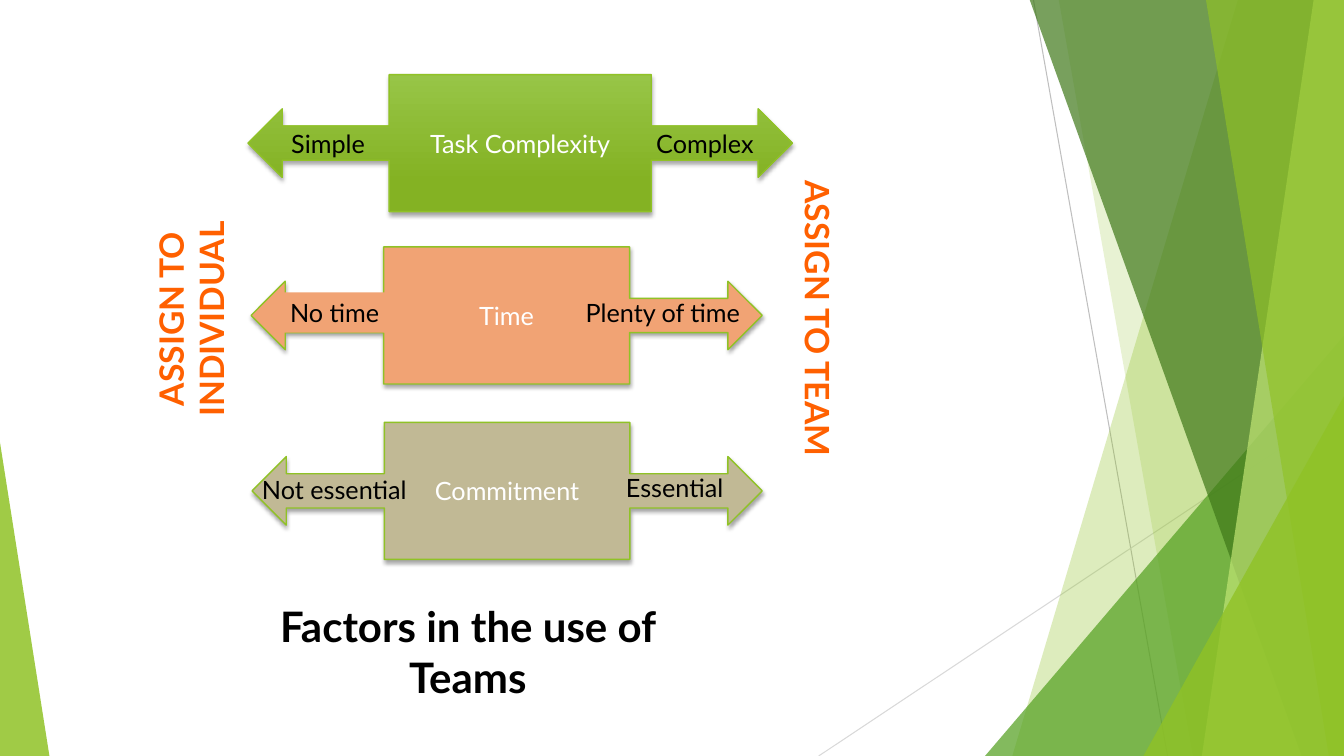
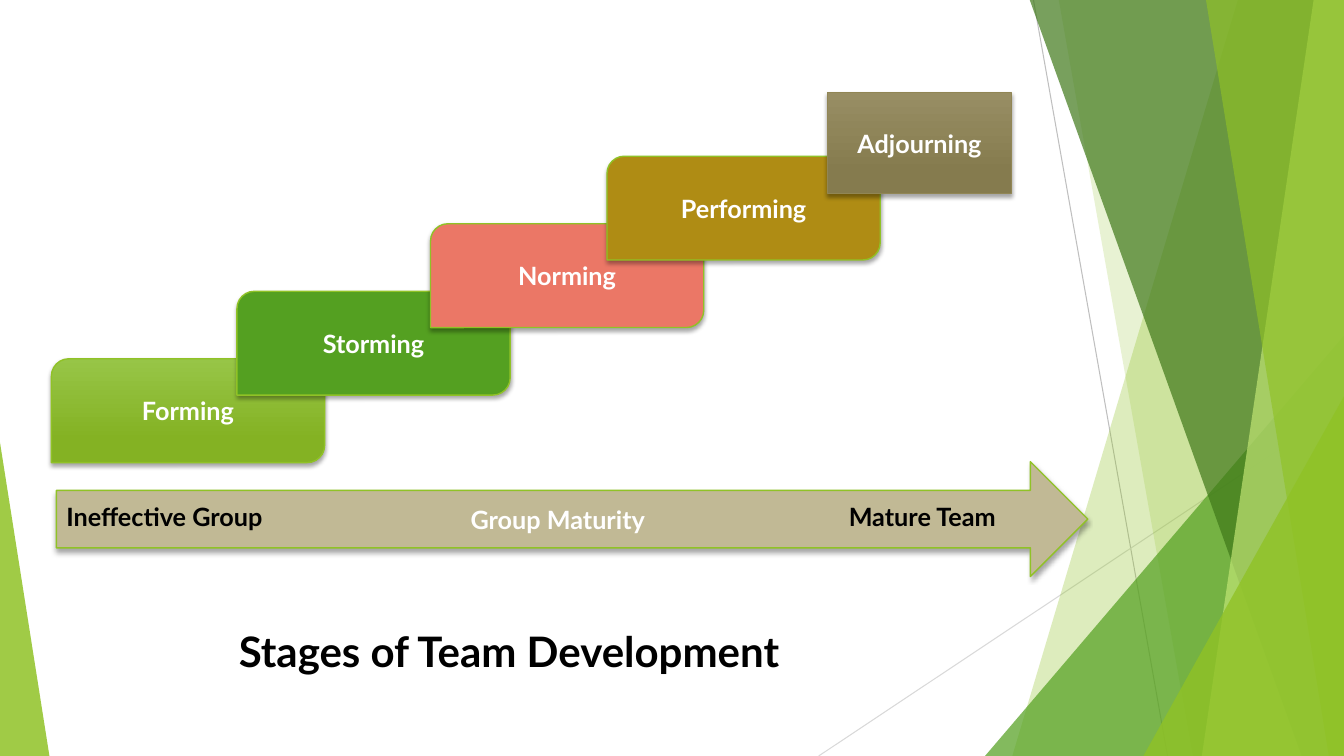
import lxml.etree
import pptx
import pptx.dml.color
import pptx.enum.shapes
import pptx.enum.text
import pptx.oxml.ns
import pptx.util

Inches = pptx.util.Inches
Pt = pptx.util.Pt
RGBColor = pptx.dml.color.RGBColor
Shapes = pptx.enum.shapes.MSO_SHAPE
Align = pptx.enum.text.PP_ALIGN
Anchor = pptx.enum.text.MSO_ANCHOR
qn = pptx.oxml.ns.qn

FONT = "Lato"
SLIDE_WIDTH, SLIDE_HEIGHT = 13.33, 7.5
WHITE = RGBColor(0xFF, 0xFF, 0xFF)
BLACK = RGBColor(0x00, 0x00, 0x00)
LIME = RGBColor(0x90, 0xC2, 0x26)
PALE_LIME = RGBColor(0xC0, 0xE4, 0x74)
GREEN = RGBColor(0x54, 0xA0, 0x21)
DARK_GREEN = RGBColor(0x3F, 0x78, 0x19)
ORANGE = RGBColor(0xFF, 0x60, 0x00)
PEACH = RGBColor(0xF1, 0xA3, 0x74)
SAND = RGBColor(0xC1, 0xB9, 0x95)
CORAL = RGBColor(0xEB, 0x77, 0x66)
GOLD = RGBColor(0xAF, 0x8C, 0x14)
OLIVE = RGBColor(0x91, 0x86, 0x55)
GRAY = RGBColor(0xBF, 0xBF, 0xBF)
LIGHT_GRAY = RGBColor(0xD9, 0xD9, 0xD9)
LIME_GRADIENT = (RGBColor(0x97, 0xC5, 0x47), RGBColor(0x84, 0xB2, 0x23))
OLIVE_GRADIENT = (RGBColor(0x98, 0x8E, 0x64), RGBColor(0x85, 0x7B, 0x4E))


def write_text(shape, text, *, size=18, color=BLACK, bold=False,
               align=Align.LEFT, anchor=Anchor.TOP):
    frame = shape.text_frame
    frame.word_wrap = True
    frame.auto_size = pptx.enum.text.MSO_AUTO_SIZE.NONE
    frame.vertical_anchor = anchor
    paragraph = frame.paragraphs[0]
    paragraph.alignment = align
    run = paragraph.add_run()
    run.text = text
    run.font.name = FONT
    run.font.size = Pt(size)
    run.font.bold = bold
    run.font.color.rgb = color


def fill_shape(shape, fill, opacity=100):
    """Fill with one colour, or with a vertical gradient for a colour pair."""
    if isinstance(fill, tuple) and not isinstance(fill, RGBColor):
        shape.fill.gradient()
        shape.fill.gradient_angle = 270
        for stop, color, position in zip(shape.fill.gradient_stops, fill, (0, 0.78)):
            stop.color.rgb = color
            stop.position = position
        return
    shape.fill.solid()
    shape.fill.fore_color.rgb = fill
    if opacity < 100:
        color_element = shape.element.spPr.find(qn("a:solidFill"))[0]
        lxml.etree.SubElement(color_element, qn("a:alpha"), val=str(opacity * 1000))


def add_shadow(shape):
    shape.shadow.inherit = False
    effects = shape.element.spPr.find(qn("a:effectLst"))
    shadow = lxml.etree.SubElement(
        effects, qn("a:outerShdw"), blurRad=str(Pt(3)), dist=str(Pt(2)),
        dir="5400000", rotWithShape="0")
    color = lxml.etree.SubElement(shadow, qn("a:srgbClr"), val=str(BLACK))
    lxml.etree.SubElement(color, qn("a:alpha"), val="35000")


def add_block(slide, kind, box, text, fill, *, line=LIME, bold=False):
    shape = slide.shapes.add_shape(kind, *map(Inches, box))
    fill_shape(shape, fill)
    shape.line.color.rgb = line
    shape.line.width = Pt(1)
    add_shadow(shape)
    write_text(shape, text, color=WHITE, bold=bold,
               align=Align.CENTER, anchor=Anchor.MIDDLE)


def add_label(slide, box, text, *, rotation=0, fill=None, **text_format):
    label = slide.shapes.add_textbox(*map(Inches, box))
    label.rotation = rotation
    if fill is not None:
        fill_shape(label, fill)
    write_text(label, text, **text_format)


def set_title(slide, box, text):
    title = slide.shapes.title
    title.left, title.top, title.width, title.height = map(Inches, box)
    write_text(title, text, size=30, bold=True, align=Align.CENTER)


# Shared background
def add_band(slide, points, color, opacity):
    corners = [(Inches(x), Inches(y)) for x, y in points]
    builder = slide.shapes.build_freeform(*corners[0], scale=1.0)
    builder.add_line_segments(corners[1:], close=True)
    return finish_decoration(builder.convert_to_shape(), color, opacity)


def add_triangle(slide, box, apex, color, opacity):
    triangle = slide.shapes.add_shape(Shapes.ISOSCELES_TRIANGLE, *map(Inches, box))
    triangle.adjustments[0] = apex
    return finish_decoration(triangle, color, opacity)


def finish_decoration(shape, color, opacity):
    fill_shape(shape, color, opacity)
    shape.line.fill.background()
    shape.shadow.inherit = False
    return shape


def add_thin_line(slide, start, end, color):
    line = slide.shapes.add_connector(
        pptx.enum.shapes.MSO_CONNECTOR.STRAIGHT, *map(Inches, start + end))
    line.line.color.rgb = color
    line.line.width = Pt(0.75)
    lxml.etree.SubElement(line.element.spPr, qn("a:effectLst"))
    return line


def add_background(slide):
    """Draw the background once and move it to the layout both slides use."""
    def right_band(top_x, bottom_x, color, opacity):
        points = [(top_x, -0.01), (SLIDE_WIDTH, -0.01),
                  (SLIDE_WIDTH, SLIDE_HEIGHT), (bottom_x, SLIDE_HEIGHT)]
        return add_band(slide, points, color, opacity)

    decorations = [
        add_thin_line(slide, (10.25, 0), (11.58, SLIDE_HEIGHT), GRAY),
        add_thin_line(slide, (SLIDE_WIDTH, 4.03), (8.12, SLIDE_HEIGHT), LIGHT_GRAY),
        right_band(12.28, 10.04, LIME, 30),
        right_band(10.5, 11.83, LIME, 20),
        add_triangle(slide, (9.77, 3.33, 3.56, 4.17), 1, GREEN, 72),
        right_band(10.21, 12.91, DARK_GREEN, 70),
        right_band(13.03, 11.92, PALE_LIME, 70),
        right_band(11.96, 13.18, LIME, 65),
        add_triangle(slide, (11.34, 3.93, 1.99, 3.57), 1, LIME, 80),
        add_triangle(slide, (0, 4.39, 0.49, 3.11), 0, LIME, 85),
    ]
    layout_tree = slide.slide_layout.shapes.element
    for number, shape in enumerate(decorations, start=101):
        shape.element.xpath(".//p:cNvPr")[0].set("id", str(number))
        layout_tree.append(shape.element)


# Slide 1
def build_factors(slide):
    # Factor, fill, callout box, then text, left, top and width of both ends
    factors = [
        ("Task Complexity", LIME_GRADIENT, (2.46, 0.74, 5.4, 1.36),
         ("Simple", 2.79, 1.22, 1.15), ("Complex", 6.41, 1.22, 1.41)),
        ("Time", PEACH, (2.49, 2.45, 5.07, 1.36),
         ("No time", 2.78, 2.9, 1.23), ("Plenty of time", 5.71, 2.9, 2.05)),
        ("Commitment", SAND, (2.5, 4.19, 5.06, 1.36),
         ("Not essential", 2.5, 4.66, 1.88), ("Essential", 6.11, 4.64, 1.34)),
    ]
    for factor, fill, box, *ends in factors:
        add_block(slide, Shapes.LEFT_RIGHT_ARROW_CALLOUT, box, factor, fill)
        for text, left, top, width in ends:
            # This label covers the outline of the arrow shaft
            label_fill = fill if text == "No time" else None
            add_label(slide, (left, top, width, 0.4), text, fill=label_fill)

    side_format = dict(size=24, color=ORANGE, bold=True, align=Align.CENTER)
    add_label(slide, (0.17, 2.71, 3.45, 0.91), "ASSIGN TO INDIVIDUAL",
              rotation=270, **side_format)
    add_label(slide, (6.39, 2.91, 3.45, 0.5), "ASSIGN TO TEAM",
              rotation=90, **side_format)
    set_title(slide, (2.14, 5.91, 5, 1.11), "Factors in the use of Teams")


# Slide 2
def build_stages(slide):
    set_title(slide, (0.76, 6.16, 8.58, 0.61), "Stages of Team Development")
    add_block(slide, Shapes.RIGHT_ARROW, (0.56, 4.58, 10.23, 1.14),
              "Group Maturity", SAND, bold=True)
    add_label(slide, (0.56, 4.92, 2.58, 0.4), "Ineffective Group", bold=True)
    add_label(slide, (8.32, 4.92, 1.96, 0.4), "Mature Team", bold=True)

    stages = [("Forming", 0.51, LIME_GRADIENT), ("Storming", 2.35, GREEN),
              ("Norming", 4.27, CORAL), ("Performing", 6.02, GOLD)]
    for index, (stage, left, fill) in enumerate(stages):
        add_block(slide, Shapes.ROUND_2_DIAG_RECTANGLE,
                  (left, 3.56 - 0.67 * index, 2.71, 1.03), stage, fill, bold=True)
    add_block(slide, Shapes.RECTANGLE, (8.21, 0.92, 1.82, 1), "Adjourning",
              OLIVE_GRADIENT, line=OLIVE, bold=True)


def main():
    presentation = pptx.Presentation()
    presentation.slide_width = Inches(SLIDE_WIDTH)
    presentation.slide_height = Inches(SLIDE_HEIGHT)
    title_only = presentation.slide_layouts.get_by_name("Title Only")
    factors_slide = presentation.slides.add_slide(title_only)
    add_background(factors_slide)
    build_factors(factors_slide)
    build_stages(presentation.slides.add_slide(title_only))
    presentation.save("out.pptx")


if __name__ == "__main__":
    main()
